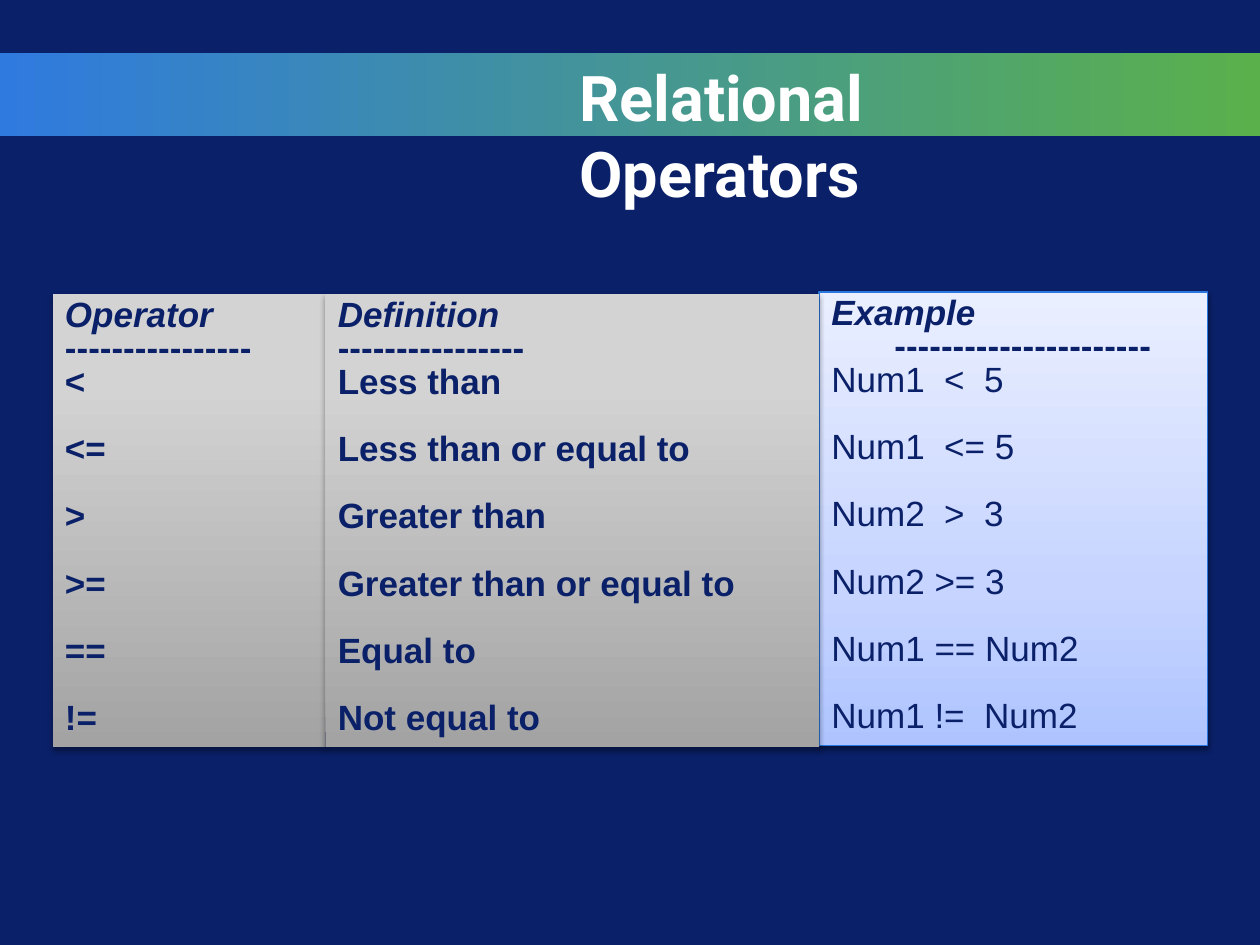
"""Build a slide listing the relational operators with their meanings and examples."""
from dataclasses import dataclass

from lxml import etree
from pptx import Presentation
from pptx import util as u
from pptx.dml.color import RGBColor
from pptx.enum import shapes, text
from pptx.oxml.ns import qn


@dataclass(frozen=True)
class Theme:
    navy: str = "0A2068"
    white: str = "FFFFFF"
    edge: str = "2A77DE"
    band: tuple = ((0, "2F7ADF"), (100, "5AB14B"))
    gray: tuple = ((0, "A3A3A3"), (80, "D3D3D3"), (100, "D4D4D4"))
    blue: tuple = ((0, "AFC4FF"), (35, "C6D4FF"), (100, "EAEFFF"))
    title_font: str = "Roboto"
    body_font: str = "Arial"
    title_size: float = 36
    body_size: float = 20
    row_gap: float = 19.2


class Deck:
    def __init__(self, prs, theme):
        self.theme = theme
        self.s = prs.slides.add_slide(prs.slide_layouts[6])
        fill = self.s.background.fill
        fill.solid()
        fill.fore_color.rgb = RGBColor.from_string(theme.navy)

    def font(self, target, name, size, color, bold=True, italic=False):
        f = target.font
        f.name, f.size, f.bold, f.italic = name, u.Pt(size), bold, italic
        f.color.rgb = RGBColor.from_string(color)

    def rect(self, left, top, width, height, stops, angle=0, edge=None):
        sp = self.s.shapes.add_shape(shapes.MSO_SHAPE.RECTANGLE, u.Cm(left), u.Cm(top),
                                     u.Cm(width), u.Cm(height))
        sp.shadow.inherit = False
        sp.fill.gradient()
        sp.fill.gradient_angle = angle
        gs_list = sp._element.spPr.find(".//" + qn("a:gsLst"))
        for gs in list(gs_list):
            gs_list.remove(gs)
        for pos, color in stops:
            gs = etree.SubElement(gs_list, qn("a:gs"), pos=str(pos * 1000))
            etree.SubElement(gs, qn("a:srgbClr"), val=color)
        if edge:
            sp.line.color.rgb = RGBColor.from_string(edge)
            sp.line.width = u.Pt(0.75)
        else:
            sp.line.fill.background()
        return sp

    def shadow(self, sp, opacity, distance):
        effects = sp._element.spPr.find(qn("a:effectLst"))
        outer = etree.SubElement(effects, qn("a:outerShdw"), blurRad=str(u.Pt(3.1)),
                                 dist=str(u.Pt(distance)), dir="5400000", rotWithShape="0")
        color = etree.SubElement(outer, qn("a:srgbClr"), val="000000")
        etree.SubElement(color, qn("a:alpha"), val=str(opacity * 1000))

    def title(self, left, top, width, height, words):
        tf = self.s.shapes.add_textbox(u.Cm(left), u.Cm(top), u.Cm(width),
                                       u.Cm(height)).text_frame
        tf.word_wrap = True
        p = tf.paragraphs[0]
        p.text = words
        self.font(p, self.theme.title_font, self.theme.title_size, self.theme.white)

    def paragraph(self, tf, first, hanging):
        p = tf.paragraphs[0] if first else tf.add_paragraph()
        p.alignment = text.PP_ALIGN.LEFT
        p.line_spacing = 0.8
        if hanging:
            pPr = p._p.get_or_add_pPr()
            pPr.set("marL", str(u.Cm(1.27)))
            pPr.set("indent", str(u.Cm(-1.27)))
        return p

    def column(self, sp, heading, dashes, rows, bold=True, hanging=False):
        t = self.theme
        tf = sp.text_frame
        tf.word_wrap = True
        tf.vertical_anchor = text.MSO_ANCHOR.TOP
        p = self.paragraph(tf, True, hanging)
        r = p.add_run()
        r.text = heading
        self.font(r, t.body_font, t.body_size, t.navy, italic=True)
        if hanging:
            p.add_line_break()
        else:
            p = self.paragraph(tf, False, hanging)
        r = p.add_run()
        r.text = "-" * dashes
        self.font(r, t.body_font, t.body_size, t.navy)
        for i, row in enumerate(rows):
            p = self.paragraph(tf, False, hanging)
            p.text = row
            p.space_before = u.Pt(t.row_gap if i else 0)
            self.font(p, t.body_font, t.body_size, t.navy, bold)


def main():
    prs = Presentation()
    prs.slide_width, prs.slide_height = u.Cm(25.4), u.Cm(19.05)
    theme = Theme()
    deck = Deck(prs, theme)
    operators, definitions, examples = zip(
        ("<", "Less than", "Num1  <  5"),
        ("<=", "Less than or equal to", "Num1  <= 5"),
        (">", "Greater than", "Num2  >  3"),
        (">=", "Greater than or equal to", "Num2 >= 3"),
        ("==", "Equal to", "Num1 == Num2"),
        ("!=", "Not equal to", "Num1 !=  Num2"),
    )
    deck.rect(0, 1.06, 25.4, 1.69, theme.band)
    deck.title(11.43, 1.06, 8.15, 1.8, "Relational Operators")

    sp = deck.rect(16.51, 5.89, 7.83, 9.14, theme.blue, 90, theme.edge)
    deck.shadow(sp, 38, 1.6)
    deck.column(sp, "Example", 22, examples, bold=False, hanging=True)
    for left, width, heading, rows in ((1.06, 5.5, "Operator", operators),
                                       (6.56, 9.95, "Definition", definitions)):
        sp = deck.rect(left, 5.93, width, 9.14, theme.gray, 90)
        deck.shadow(sp, 35, 1.8)
        deck.column(sp, heading, 16, rows)
    prs.save("out.pptx")


if __name__ == "__main__":
    main()
